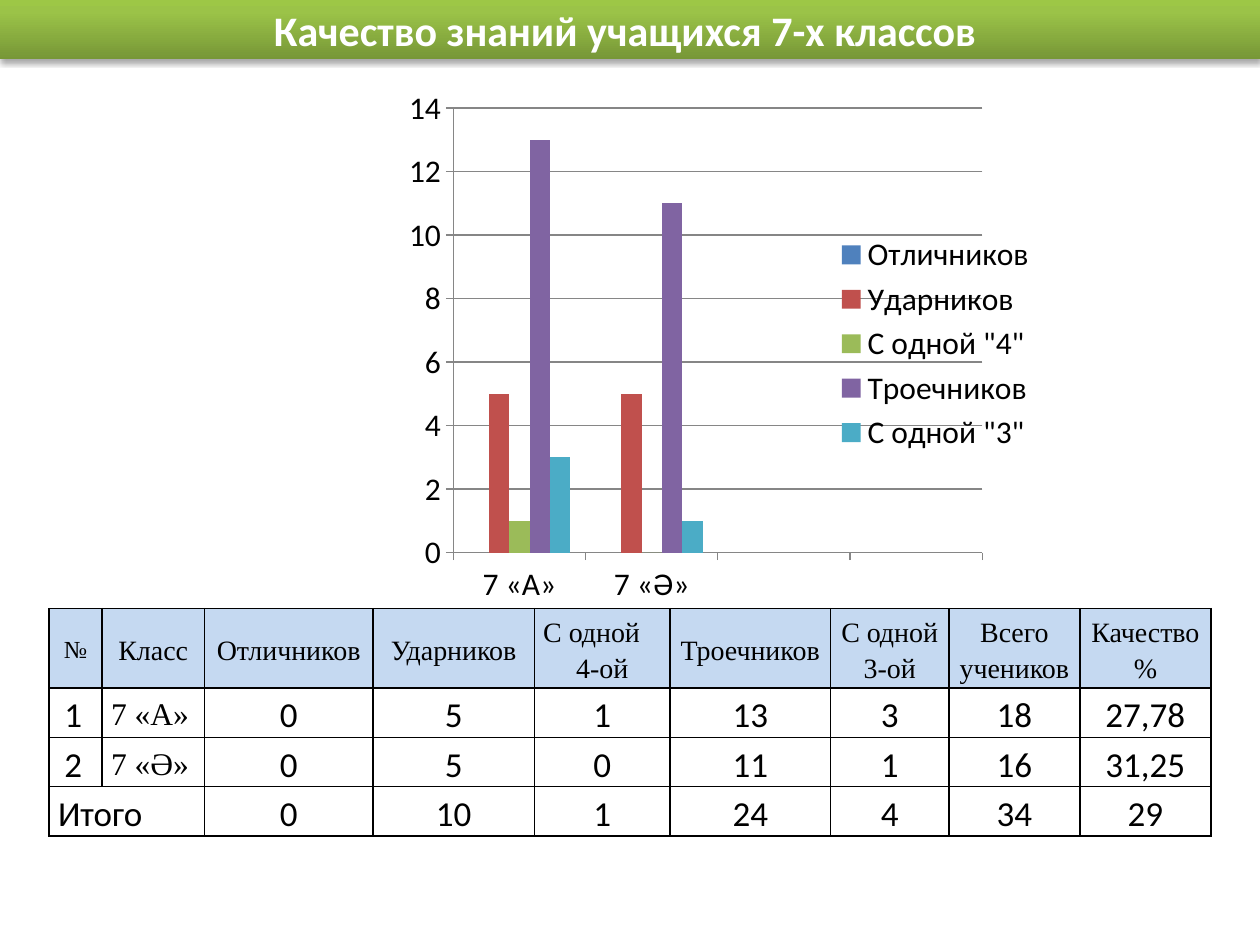
from lxml import etree
from pptx import Presentation
from pptx.chart.data import CategoryChartData
from pptx.dml.color import RGBColor
from pptx.enum.chart import XL_CHART_TYPE, XL_LEGEND_POSITION, XL_TICK_MARK
from pptx.enum.shapes import MSO_SHAPE
from pptx.enum.text import MSO_ANCHOR, PP_ALIGN
from pptx.oxml.ns import qn
from pptx.util import Cm, Pt

BARS = XL_CHART_TYPE.COLUMN_CLUSTERED
RIGHT = XL_LEGEND_POSITION.RIGHT
OUT = XL_TICK_MARK.OUTSIDE
RECT = MSO_SHAPE.RECTANGLE
MID = MSO_ANCHOR.MIDDLE
LEFT, CENTER = PP_ALIGN.LEFT, PP_ALIGN.CENTER

WIDTHS = [1.07, 2.06, 3.4, 3.25, 2.74, 3.23, 2.39, 2.64, 2.64]
HEIGHTS = [1.6, 0.99, 0.99, 0.99]
ROWS = [
    ["№", "Класс", "Отличников", "Ударников", "С одной\n4-ой", "Троечников",
     "С одной 3-ой", "Всего учеников", "Качество %"],
    ["1", "7 «А»", "0", "5", "1", "13", "3", "18", "27,78"],
    ["2", "7 «Ә»", "0", "5", "0", "11", "1", "16", "31,25"],
    ["Итого", "", "0", "10", "1", "24", "4", "34", "29"],
]
SERIES = [
    ("Отличников", [None, None], "4F81BD"),
    ("Ударников", [5, 5], "C0504D"),
    ('С одной "4"', [1, 0], "9BBB59"),
    ("Троечников", [13, 11], "8064A2"),
    ('С одной "3"', [3, 1], "4BACC6"),
]
STOPS = [(0, "779737"), (80, "9BC348"), (100, "9DC746")]


def color(code):
    return RGBColor.from_string(code)


def child(parent, tag, **attrs):
    node = etree.SubElement(parent, qn(tag))
    for key, val in attrs.items():
        node.set(key, str(val))
    return node


class Deck:
    sans = "Calibri"
    serif = "Times New Roman"
    ink = "000000"
    white = "FFFFFF"
    head = "C5D9F1"
    grid = "868686"

    def __init__(self):
        self.file = Presentation()
        self.file.slide_width = Cm(25.4)
        self.file.slide_height = Cm(19.05)
        self.slide = self.file.slides.add_slide(self.file.slide_layouts[6])

    def font(self, font, size, name, code, bold=False):
        font.size = Pt(size)
        font.name = name
        font.bold = bold
        font.color.rgb = color(code)

    def banner(self, text, box):
        shape = self.slide.shapes.add_shape(RECT, *map(Cm, box))
        shape.fill.gradient()
        shape.fill.gradient_angle = 90
        stops = shape.element.spPr.find(".//" + qn("a:gsLst"))
        for stop in list(stops):
            stops.remove(stop)
        for pos, code in STOPS:
            child(child(stops, "a:gs", pos=pos * 1000), "a:srgbClr", val=code)
        shape.line.fill.background()
        shape.shadow.inherit = False
        glow = child(shape.element.spPr.find(qn("a:effectLst")), "a:outerShdw",
                     blurRad=Pt(3.1), dist=Pt(1.8), dir=90 * 60000, rotWithShape=0)
        child(child(glow, "a:srgbClr", val=self.ink), "a:alpha", val=35000)
        frame = shape.text_frame
        frame.text = text
        frame.vertical_anchor = MID
        para = frame.paragraphs[0]
        para.alignment = CENTER
        self.font(para.runs[0].font, 24, self.sans, self.white, True)

    def chart(self, cats, series, box, plot):
        data = CategoryChartData()
        data.categories = cats
        for name, vals, _ in series:
            data.add_series(name, vals + [None] * (len(cats) - len(vals)))
        chart = self.slide.shapes.add_chart(BARS, *map(Cm, box), data).chart
        self.font(chart.font, 18, self.sans, self.ink)
        chart.has_title = False
        chart.has_legend = True
        chart.legend.position = RIGHT
        chart.legend.include_in_layout = False
        bars = chart.plots[0]
        bars.vary_by_categories = False
        bars.gap_width = 150
        bars.overlap = 0
        for item, (_, _, code) in zip(bars.series, series):
            item.format.fill.solid()
            item.format.fill.fore_color.rgb = color(code)
        axis = chart.value_axis
        axis.minimum_scale, axis.maximum_scale, axis.major_unit = 0, 14, 2
        axis.has_major_gridlines = True
        lines = [axis.major_gridlines.format.line]
        for side in (axis, chart.category_axis):
            side.major_tick_mark = OUT
            lines.append(side.format.line)
        for line in lines:
            line.color.rgb = color(self.grid)
            line.width = Pt(0.75)
        self.place(chart.element.find(".//" + qn("c:plotArea")), plot)

    def place(self, area, plot):
        for old in area.findall(qn("c:layout")):
            area.remove(old)
        layout = etree.Element(qn("c:layout"))
        area.insert(0, layout)
        manual = child(layout, "c:manualLayout")
        child(manual, "c:layoutTarget", val="inner")
        for tag in ("c:xMode", "c:yMode"):
            child(manual, tag, val="edge")
        for key, val in zip("xywh", plot):
            child(manual, "c:" + key, val=val)

    def border(self, cell):
        props = cell._tc.get_or_add_tcPr()
        for side in "LRTB":
            line = child(props, "a:ln" + side, w=Pt(1))
            child(child(line, "a:solidFill"), "a:srgbClr", val=self.ink)

    def cell(self, cell, text, size, name, align, fill, inset):
        self.border(cell)
        cell.fill.solid()
        cell.fill.fore_color.rgb = color(fill)
        cell.vertical_anchor = MID
        cell.margin_left, cell.margin_right = Cm(inset), Cm(0.18)
        cell.margin_top = cell.margin_bottom = 0
        cell.text_frame.text = text
        paras = cell.text_frame.paragraphs
        for para in paras:
            para.alignment = align
            para.line_spacing = 1.15
            for run in para.runs:
                self.font(run.font, size, name, self.ink)
        if len(paras) > 1:
            paras[0].alignment = LEFT

    def table(self, rows, left, top):
        frame = self.slide.shapes.add_table(
            len(rows), len(WIDTHS), Cm(left), Cm(top),
            Cm(sum(WIDTHS)), Cm(sum(HEIGHTS)))
        table = frame.table
        table.first_row = table.horz_banding = False
        for col, width in zip(table.columns, WIDTHS):
            col.width = Cm(width)
        for row, height in zip(table.rows, HEIGHTS):
            row.height = Cm(height)
        for r, row in enumerate(rows):
            for c, text in enumerate(row):
                size, name, align = 20, self.sans, CENTER
                if r == 0:
                    size, name = 16 if c else 14, self.serif
                elif c < 2:
                    align = LEFT
                    if c == 1:
                        size, name = 18, self.serif
                fill = self.white if r else self.head
                inset = 0.31 if c == 0 and r in (1, 2) else 0.18
                self.cell(table.cell(r, c), text, size, name, align, fill, inset)
        last = len(rows) - 1
        table.cell(last, 0).merge(table.cell(last, 1))

    def save(self):
        self.file.save("out.pptx")


def main():
    deck = Deck()
    deck.table(ROWS, 0.99, 12.27)
    deck.banner("Качество знаний учащихся 7-х классов ", (0, 0, 25.4, 1.19))
    deck.chart(["7 «А»", "7 «Ә»", "", ""], SERIES,
               (4.23, 1.53, 16.93, 10.8), (0.29, 0.06, 0.63, 0.83))
    deck.save()


if __name__ == "__main__":
    main()
